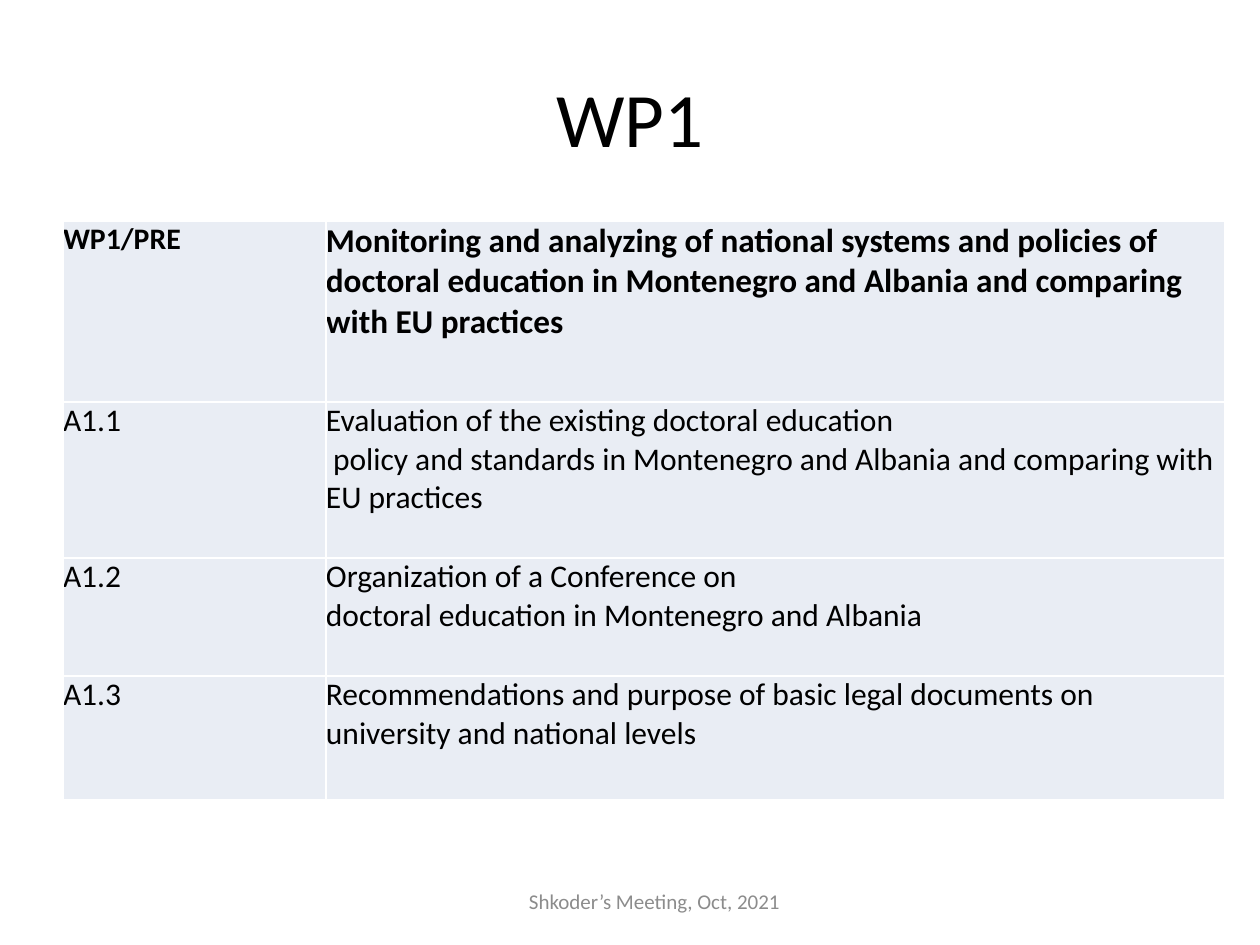
from pptx import Presentation
from pptx import util as u
from pptx.dml.color import RGBColor
from pptx.enum import text

TITLE = "WP1"
FOOTER = "Shkoder’s Meeting, Oct, 2021"
ROWS = [
    (181, "WP1/PRE", "Monitoring and analyzing of national systems and policies of "
     "doctoral education in Montenegro and Albania and comparing with EU practices"),
    (156, "A1.1", "Evaluation of the existing doctoral education\v policy and standards "
     "in Montenegro and Albania and comparing with EU practices"),
    (118, "A1.2", "Organization of a Conference on \v"
     "doctoral education in Montenegro and Albania"),
    (124, "A1.3", "Recommendations and purpose of basic legal documents on "
     "university and national levels"),
]
COLUMNS = (263, 899)
HEADER_SIZES = (17, 19)
BODY_SIZE = 18
COLORS = {"ink": "000000", "cell": "E9EDF4", "footer": "8C8C8C"}
FONT = "Calibri"


def px(n):
    return u.Emu(round(n * 914400 / 126))


def rgb(name):
    return RGBColor.from_string(COLORS[name])


def style(p, size, color="ink", bold=False, align=None):
    p.font.name = FONT
    p.font.size = u.Pt(size)
    p.font.bold = bold
    p.font.color.rgb = rgb(color)
    p.alignment = align


def center_text(sp, content, size, color):
    tf = sp.text_frame
    tf.word_wrap = True
    tf.vertical_anchor = text.MSO_ANCHOR.MIDDLE
    tf.text = content
    style(tf.paragraphs[0], size, color, align=text.PP_ALIGN.CENTER)


def add_work_table(s):
    heights = [row[0] for row in ROWS]
    frame = s.shapes.add_table(len(ROWS), len(COLUMNS), px(63), px(221),
                               px(sum(COLUMNS)), px(sum(heights)))
    table = frame.table
    table.first_row = table.horz_banding = False
    for column, width in zip(table.columns, COLUMNS):
        column.width = px(width)
    for i, (height, *contents) in enumerate(ROWS):
        table.rows[i].height = px(height)
        for j, content in enumerate(contents):
            cell = table.cell(i, j)
            cell.margin_left = cell.margin_right = 0
            cell.margin_top = cell.margin_bottom = 0
            cell.fill.solid()
            cell.fill.fore_color.rgb = rgb("cell")
            cell.text_frame.text = content
            size = HEADER_SIZES[j] if i == 0 else BODY_SIZE
            style(cell.text_frame.paragraphs[0], size, bold=i == 0)


def main():
    prs = Presentation()
    prs.slide_width, prs.slide_height = px(1260), px(945)
    s = prs.slides.add_slide(prs.slide_layouts[5])
    title = s.shapes.title
    title.left, title.top, title.width, title.height = map(px, (63, 38, 1134, 158))
    center_text(title, TITLE, 44, "ink")
    add_work_table(s)
    footer = s.shapes.add_textbox(*map(px, (431, 876, 447, 50)))
    center_text(footer, FOOTER, 12, "footer")
    prs.save("out.pptx")


if __name__ == "__main__":
    main()
